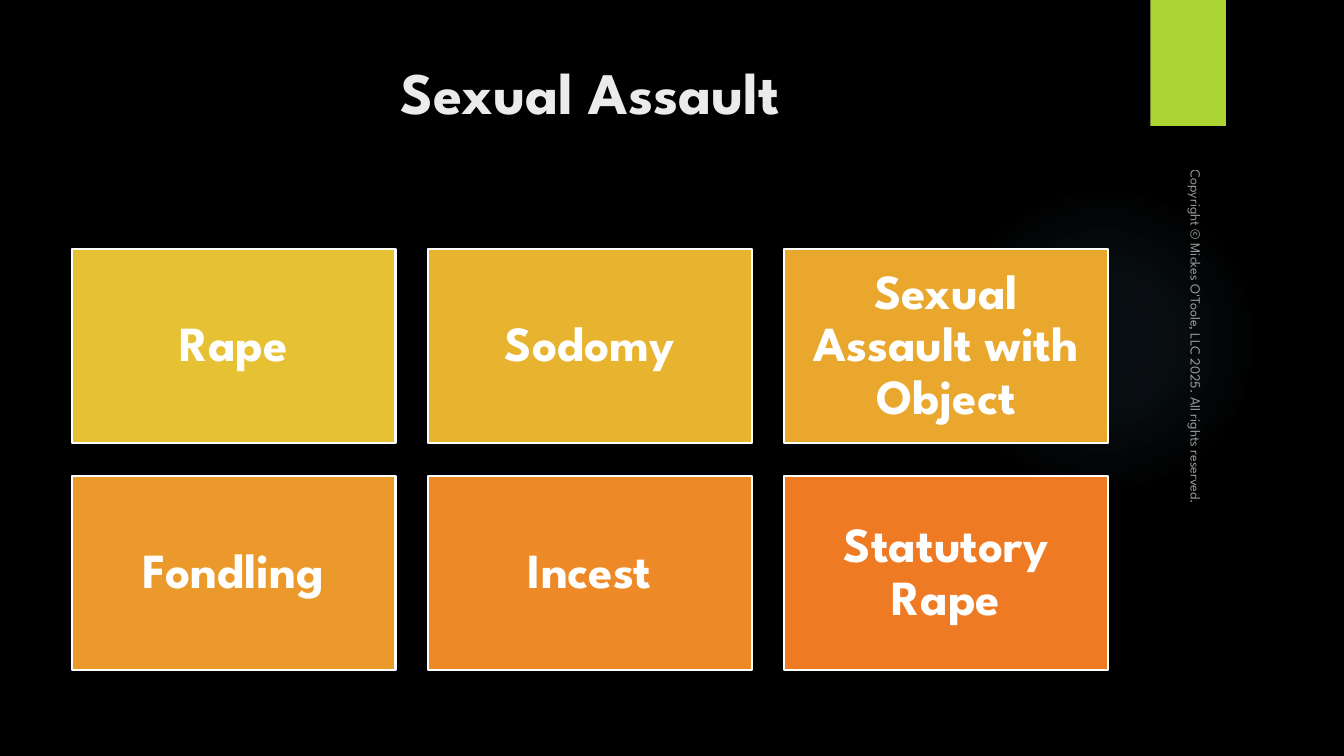
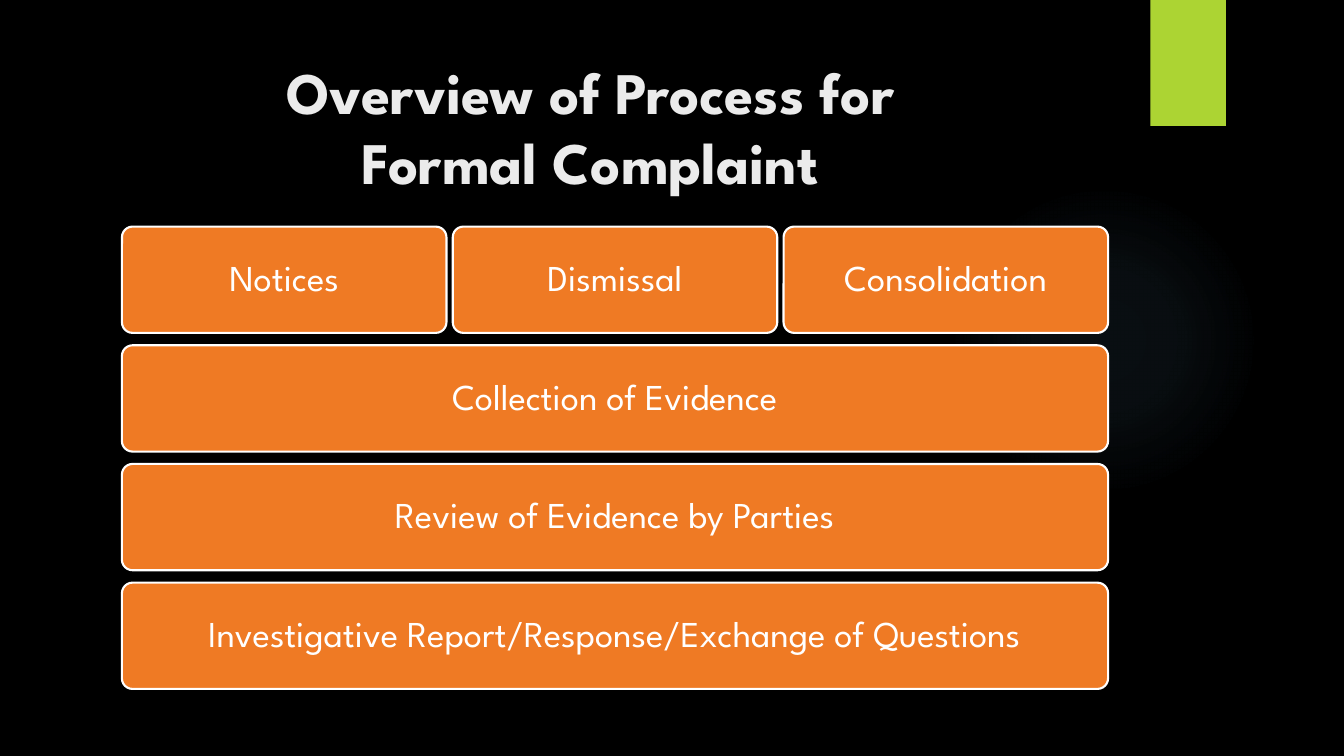
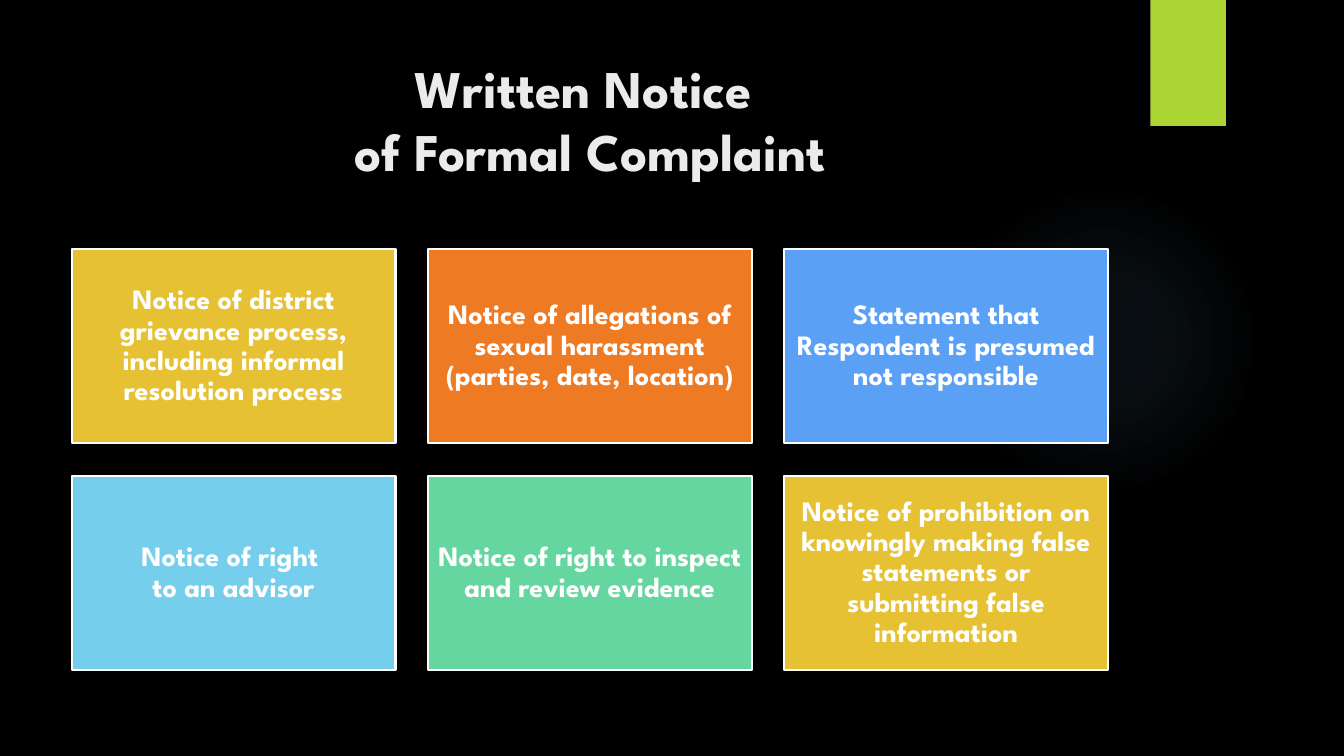
from lxml import etree
from pptx import Presentation
from pptx.dml.color import RGBColor
from pptx.enum.shapes import MSO_SHAPE
from pptx.enum.text import MSO_ANCHOR, MSO_AUTO_SIZE, PP_ALIGN
from pptx.oxml import parse_xml
from pptx.oxml.ns import nsdecls, qn
from pptx.util import Pt

BLACK = RGBColor(0x00, 0x00, 0x00)
WHITE = RGBColor(0xFF, 0xFF, 0xFF)
TITLE_GREY = RGBColor(0xEB, 0xEB, 0xEB)
LIME = RGBColor(0xAC, 0xD4, 0x33)
YELLOW = RGBColor(0xE6, 0xC1, 0x33)
GOLD = RGBColor(0xE8, 0xB4, 0x30)
AMBER = RGBColor(0xEA, 0xA7, 0x2D)
HONEY = RGBColor(0xEB, 0x99, 0x2A)
TANGERINE = RGBColor(0xED, 0x8A, 0x27)
ORANGE = RGBColor(0xEF, 0x7A, 0x24)
BLUE = RGBColor(0x5A, 0xA0, 0xF5)
SKY = RGBColor(0x75, 0xCE, 0xEC)
GREEN = RGBColor(0x65, 0xD6, 0xA0)
GLOW_COLOUR = "7AC4F0"
GLOW_STOPS = [(0, 7), (36, 6), (69, 0)]  # position and opacity, percent
FONT = "League Spartan"

COPYRIGHT = "Copyright © Mickes O'Toole, LLC 2025. All rights reserved."

# Card grids in points; every row is stretched to the full width.
CARDS = dict(outline=MSO_SHAPE.RECTANGLE, left=51.1, top=177.8, width=740.4,
             height=138.9, column_gap=23.1, row_gap=23.1, bold=True)
STEPS = dict(outline=MSO_SHAPE.ROUNDED_RECTANGLE, left=87.1, top=161.9, width=704.4,
             height=75.9, column_gap=4.5, row_gap=8.87, bold=False)

SLIDES = [
    dict(title="Sexual Assault", title_size=42, grid=CARDS, size=35, copyright=COPYRIGHT, rows=[
        [("Rape", YELLOW), ("Sodomy", GOLD), ("Sexual Assault with Object", AMBER)],
        [("Fondling", HONEY), ("Incest", TANGERINE), ("Statutory Rape", ORANGE)],
    ]),
    dict(title="Overview of Process for\vFormal Complaint", title_size=42, grid=STEPS, size=26, rows=[
        [("Notices", ORANGE), ("Dismissal", ORANGE), ("Consolidation", ORANGE)],
        [("Collection of Evidence", ORANGE)],
        [("Review of Evidence by Parties", ORANGE)],
        [("Investigative Report/Response/Exchange of Questions", ORANGE)],
    ]),
    dict(title="Written Notice \vof Formal Complaint", title_size=37.8, grid=CARDS, size=20, rows=[
        [("Notice of district grievance process, including informal resolution process", YELLOW),
         ("Notice of allegations of sexual harassment (parties, date, location)", ORANGE),
         ("Statement that Respondent is presumed not responsible", BLUE)],
        [("Notice of right \vto an advisor", SKY),
         ("Notice of right to inspect and review evidence", GREEN),
         ("Notice of prohibition on knowingly making false statements or submitting false information",
          YELLOW)],
    ]),
]


def write(frame, words, size, colour, bold=False, align=PP_ALIGN.CENTER):
    frame.text = words
    frame.word_wrap = True
    paragraph = frame.paragraphs[0]
    paragraph.alignment = align
    font = paragraph.font
    font.name, font.size, font.bold = FONT, Pt(size), bold
    font.color.rgb = colour
    return paragraph


def add_plain_shape(slide, outline, left, top, width, height, colour):
    """Add a filled shape without line or shadow."""
    shape = slide.shapes.add_shape(outline, Pt(left), Pt(top), Pt(width), Pt(height))
    shape.shadow.inherit = False
    shape.fill.solid()
    shape.fill.fore_color.rgb = colour
    shape.line.fill.background()
    return shape


def add_glow(slide):
    glow = add_plain_shape(slide, MSO_SHAPE.OVAL, 677.5, 131.8, 221.8, 221.8, BLACK)
    stops = "".join(
        f'<a:gs pos="{position * 1000}"><a:srgbClr val="{GLOW_COLOUR}">'
        f'<a:alpha val="{opacity * 1000}"/></a:srgbClr></a:gs>'
        for position, opacity in GLOW_STOPS)
    gradient = parse_xml(
        f'<a:gradFill {nsdecls("a")}><a:gsLst>{stops}</a:gsLst><a:path path="circle">'
        '<a:fillToRect l="50000" t="50000" r="50000" b="50000"/></a:path></a:gradFill>')
    properties = glow.element.spPr
    properties.replace(properties.find(qn("a:solidFill")), gradient)


def add_title(slide, words, size):
    title = slide.shapes.title
    title.left, title.top, title.width, title.height = Pt(51.1), Pt(36), Pt(740.9), Pt(110.2)
    frame = title.text_frame
    frame.auto_size = MSO_AUTO_SIZE.NONE
    frame.vertical_anchor = MSO_ANCHOR.TOP
    write(frame, words, size, TITLE_GREY, bold=True)


def add_copyright(slide, words):
    notice = slide.shapes.add_textbox(Pt(704.9), Pt(254.2), Pt(303.8), Pt(23.8))
    notice.rotation = 90
    notice.text_frame.vertical_anchor = MSO_ANCHOR.BOTTOM
    write(notice.text_frame, words, 10, WHITE, align=PP_ALIGN.LEFT)
    for colour in notice.element.xpath(".//a:srgbClr"):
        etree.SubElement(colour, qn("a:alpha"), val="60000")


def add_cards(slide, rows, size, grid):
    for row_number, row in enumerate(rows):
        top = grid["top"] + row_number * (grid["height"] + grid["row_gap"])
        width = (grid["width"] - (len(row) - 1) * grid["column_gap"]) / len(row)
        for column, (words, colour) in enumerate(row):
            left = grid["left"] + column * (width + grid["column_gap"])
            card = add_plain_shape(slide, grid["outline"], left, top, width, grid["height"], colour)
            if grid["outline"] == MSO_SHAPE.ROUNDED_RECTANGLE:
                card.adjustments[0] = 0.1
            card.line.color.rgb = WHITE
            card.line.width = Pt(1.5)
            frame = card.text_frame
            frame.vertical_anchor = MSO_ANCHOR.MIDDLE
            inset = Pt(0.3 * size)
            frame.margin_left = frame.margin_right = frame.margin_top = frame.margin_bottom = inset
            write(frame, words, size, WHITE, grid["bold"]).line_spacing = 0.9


def main():
    deck = Presentation()
    deck.slide_width, deck.slide_height = Pt(960), Pt(540)
    backdrop = deck.slide_master.background.fill
    backdrop.solid()
    backdrop.fore_color.rgb = BLACK
    title_only = deck.slide_layouts[5]

    for content in SLIDES:
        slide = deck.slides.add_slide(title_only)
        add_glow(slide)
        add_plain_shape(slide, MSO_SHAPE.RECTANGLE, 821.7, 0, 54, 90, LIME)
        add_title(slide, content["title"], content["title_size"])
        if "copyright" in content:
            add_copyright(slide, content["copyright"])
        add_cards(slide, content["rows"], content["size"], content["grid"])

    deck.save("out.pptx")


if __name__ == "__main__":
    main()
